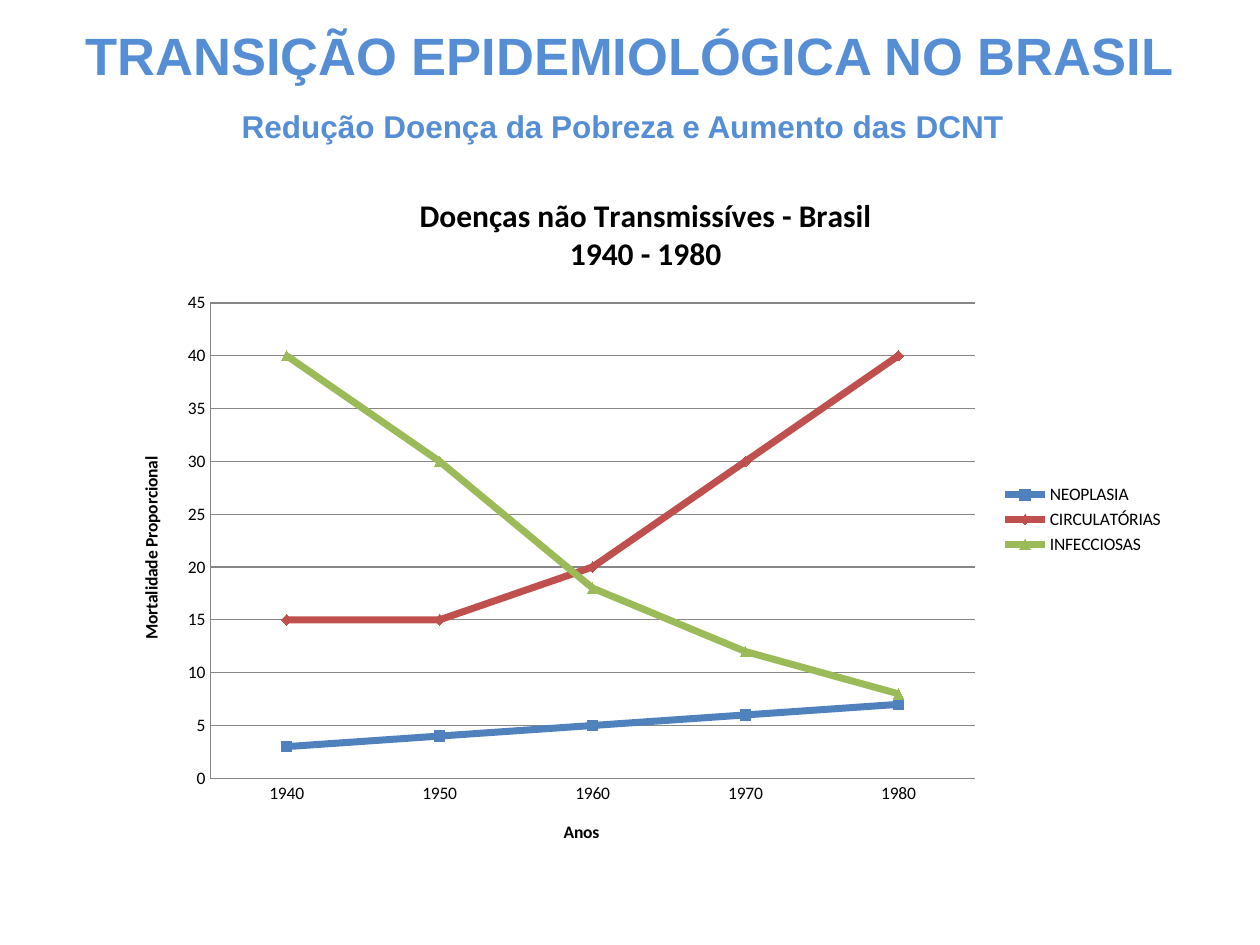
from lxml.etree import SubElement
from pptx import Presentation
from pptx.chart.data import CategoryChartData
from pptx.dml.color import RGBColor
from pptx.enum.chart import XL_CHART_TYPE, XL_LEGEND_POSITION, XL_MARKER_STYLE, XL_TICK_MARK
from pptx.enum.text import PP_ALIGN
from pptx.oxml.ns import qn
from pptx.util import Inches, Pt

HEADING_BLUE = RGBColor(0x55, 0x8E, 0xD5)
BLACK = RGBColor(0, 0, 0)
GRID_GRAY = RGBColor(0x86, 0x86, 0x86)
YEARS = ["1940", "1950", "1960", "1970", "1980"]
SERIES = [
    ("NEOPLASIA", (3, 4, 5, 6, 7), RGBColor(0x4F, 0x81, 0xBD), XL_MARKER_STYLE.SQUARE),
    ("CIRCULATÓRIAS", (15, 15, 20, 30, 40), RGBColor(0xC0, 0x50, 0x4D), XL_MARKER_STYLE.DIAMOND),
    ("INFECCIOSAS", (40, 30, 18, 12, 8), RGBColor(0x9B, 0xBB, 0x59), XL_MARKER_STYLE.TRIANGLE),
]


def add_span(para, text, size, font="Arial", color=BLACK):
    """Add one bold run to a paragraph."""
    span = para.add_run()
    span.text = text
    span.font.name = font
    span.font.size = Pt(size)
    span.font.bold = True
    span.font.color.rgb = color


def add_heading(page):
    """Add the slide heading and its subtitle in one text box."""
    box = page.shapes.add_textbox(Inches(0), Inches(0.13), Inches(10), Inches(1.11))
    frame = box.text_frame
    frame.word_wrap = True
    title, subtitle = frame.paragraphs[0], frame.add_paragraph()
    title.alignment = subtitle.alignment = PP_ALIGN.CENTER
    add_span(title, "TRANSIÇÃO EPIDEMIOLÓGICA NO BRASIL", 30, color=HEADING_BLUE)
    add_span(subtitle, "Redução Doença da Pobreza e Aumento das DCNT", 18, color=HEADING_BLUE)
    add_span(subtitle, " ", 30, color=HEADING_BLUE)


def set_chart_text(frame, lines, size):
    """Write bold lines into a chart or axis title."""
    for index, line in enumerate(lines):
        para = frame.add_paragraph() if index else frame.paragraphs[0]
        add_span(para, line, size, font="Calibri")


def style_axis(axis, title):
    """Give an axis its title and a thin line without ticks."""
    set_chart_text(axis.axis_title.text_frame, [title], 10)
    axis.major_tick_mark = axis.minor_tick_mark = XL_TICK_MARK.NONE
    axis.format.line.color.rgb = GRID_GRAY
    axis.format.line.width = Pt(0.75)


def style_series(series, color, marker):
    """Set the line and marker of one series."""
    series.smooth = False
    series.format.line.color.rgb = color
    series.format.line.width = Pt(4)
    series.marker.style = marker
    series.marker.size = 6
    series.marker.format.fill.solid()
    series.marker.format.fill.fore_color.rgb = color
    series.marker.format.line.color.rgb = color


def place_plot(chart, **fractions):
    """Fix the inner plot area as fractions of the chart."""
    area = chart._chartSpace.chart.plotArea
    for old in area.findall(qn("c:layout")):
        area.remove(old)
    layout = SubElement(area, qn("c:layout"))
    area.insert(0, layout)
    manual = SubElement(layout, qn("c:manualLayout"))
    settings = {"layoutTarget": "inner", "xMode": "edge", "yMode": "edge", **fractions}
    for name, value in settings.items():
        SubElement(manual, qn(f"c:{name}")).set("val", str(value))


def add_mortality_chart(page):
    """Add the line chart of proportional mortality."""
    data = CategoryChartData()
    data.categories = YEARS
    for name, values, _, _ in SERIES:
        data.add_series(name, values)
    chart = page.shapes.add_chart(
        XL_CHART_TYPE.LINE_MARKERS, Inches(0.91), Inches(1.35), Inches(8.43), Inches(5.55), data
    ).chart
    chart.font.name = "Calibri"
    chart.font.size = Pt(10)
    chart.font.color.rgb = BLACK
    title_lines = ["Doenças não Transmissíves - Brasil", "1940 - 1980"]
    set_chart_text(chart.chart_title.text_frame, title_lines, 18)
    chart.has_legend = True
    chart.legend.position = XL_LEGEND_POSITION.RIGHT
    chart.legend.include_in_layout = False
    style_axis(chart.category_axis, "Anos")
    style_axis(chart.value_axis, "Mortalidade Proporcional")
    chart.value_axis.minimum_scale = 0
    chart.value_axis.maximum_scale = 45
    chart.value_axis.major_unit = 5
    grid_line = chart.value_axis.major_gridlines.format.line
    grid_line.color.rgb = GRID_GRAY
    grid_line.width = Pt(0.75)
    chart.plots[0].vary_by_categories = False
    for series, (_, _, color, marker) in zip(chart.plots[0].series, SERIES):
        style_series(series, color, marker)
    place_plot(chart, x=0.09, y=0.19, w=0.72, h=0.68)


def main():
    """Build the slide and save the deck."""
    deck = Presentation()
    deck.slide_width, deck.slide_height = Inches(10), Inches(7.5)
    page = deck.slides.add_slide(deck.slide_layouts[6])
    add_heading(page)
    add_mortality_chart(page)
    deck.save("out.pptx")


if __name__ == "__main__":
    main()
